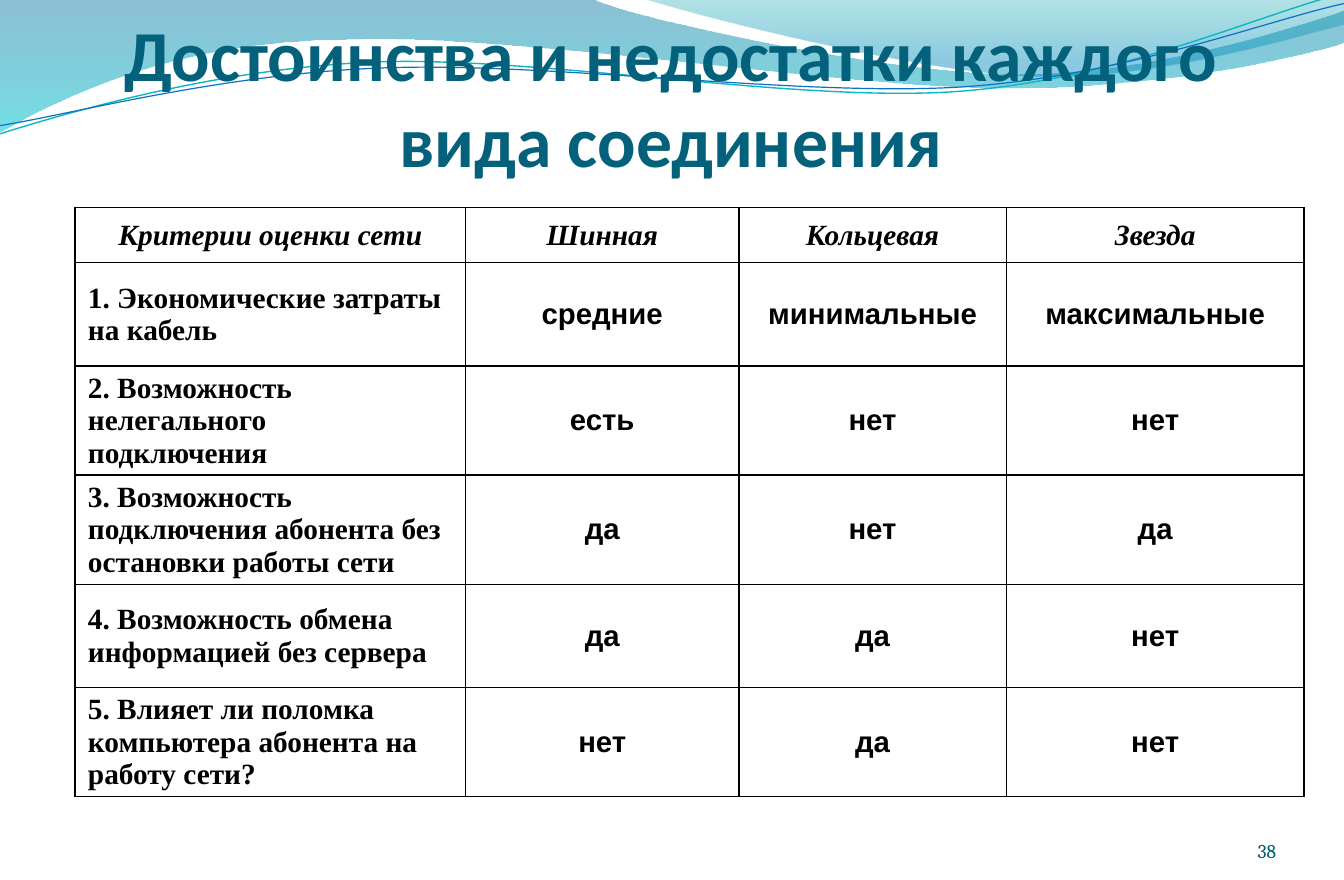
from math import cos, radians, sin

from lxml.etree import SubElement
from pptx import Presentation
from pptx.dml.color import RGBColor
from pptx.enum.text import MSO_ANCHOR, PP_ALIGN
from pptx.oxml import parse_xml
from pptx.oxml.ns import nsdecls, qn
from pptx.util import Inches, Pt

BLACK = RGBColor(0x00, 0x00, 0x00)
TITLE = RGBColor(0x04, 0x61, 0x7B)
NUMBER = RGBColor(0x04, 0x5D, 0x75)
BLUE = RGBColor(0x00, 0x74, 0xA1)
CYAN = RGBColor(0x00, 0xC6, 0xCF)
TEAL = RGBColor(0x00, 0xA1, 0xA9)
SKY = RGBColor(0x00, 0x8B, 0xBF)
AQUA = RGBColor(0x0A, 0xB8, 0xBF)
ROYAL = RGBColor(0x0F, 0x6F, 0xC6)
TILT = 2.7

LEFT_WAVE = [
    [(0, -0.01)], [(5.04, -0.01)],
    [(5.45, 0.17), (7.6, 0.63), (8.69, 0.63)],
    [(9.78, 0.63), (10.98, 0.26), (11.46, 0.09)],
    [(11.47, 0.36)],
    [(11.27, 0.44), (9.97, 0.76), (8.55, 0.75)],
    [(7.13, 0.75), (4.37, 0.28), (2.95, 0.34)],
    [(1.48, 0.35), (0.53, 0.83), (-0.01, 1.13)],
]
RIGHT_WAVE = [
    [(5.49, -0.01)],
    [(5.84, 0.11), (7.81, 0.62), (8.81, 0.65)],
    [(9.8, 0.69), (11.02, 0.32), (11.46, 0.21)],
    [(11.46, 0)],
]
AQUA_LINE = [
    [(0, 1.14)],
    [(0.55, 0.97), (1.81, 0.59), (3.17, 0.53)],
    [(4.53, 0.47), (6.79, 0.88), (8.16, 0.78)],
    [(9.54, 0.68), (10.75, 0.12), (11.43, -0.05)],
]
ROYAL_LINE = [
    [(0, 1.07)],
    [(0.54, 0.99), (1.88, 0.63), (3.24, 0.58)],
    [(4.61, 0.52), (6.84, 0.83), (8.21, 0.74)],
    [(9.58, 0.65), (10.78, 0.18), (11.46, 0.03)],
]

COLS = [3.33, 2.33, 2.28, 2.54]
ROWS = [0.47, 0.88, 0.93, 0.93, 0.88, 0.93]
CELLS = [
    ["Критерии оценки сети", "Шинная", "Кольцевая", "Звезда"],
    ["1. Экономические затраты на кабель", "средние", "минимальные", "максимальные"],
    ["2. Возможность нелегального подключения", "есть", "нет", "нет"],
    ["3. Возможность подключения абонента без остановки работы сети", "да", "нет", "да"],
    ["4. Возможность обмена информацией без сервера", "да", "да", "нет"],
    ["5. Влияет ли поломка компьютера абонента на работу сети?", "нет", "да", "нет"],
]


def turn(path, mid_x, mid_y):
    """Turn a path clockwise by the tilt about a middle point."""
    c, s = cos(radians(TILT)), sin(radians(TILT))
    return [[(mid_x + (x - mid_x) * c - (y - mid_y) * s,
              mid_y + (x - mid_x) * s + (y - mid_y) * c) for x, y in part]
            for part in path]


class Painter:
    """Hold the slide and its style, and draw each kind of element."""

    def __init__(self, slide):
        self.slide = slide
        self.edge = Pt(1)
        self.size = 18

    def outline(self, path, close):
        ends = [tuple(map(Inches, part[-1])) for part in path]
        build = self.slide.shapes.build_freeform(*ends[0])
        build.add_line_segments(ends[1:], close=close)
        shape = build.convert_to_shape()
        shape.shadow.inherit = False
        lines = list(shape._element.iter(qn("a:lnTo")))
        for line, part in zip(lines, path[1:]):
            if len(part) == 3:
                curve = SubElement(line.getparent(), qn("a:cubicBezTo"))
                for x, y in part:
                    point = SubElement(curve, qn("a:pt"))
                    point.set("x", str(Inches(x) - shape.left))
                    point.set("y", str(Inches(y) - shape.top))
                line.getparent().replace(line, curve)
        return shape

    def wave(self, path, stops):
        shape = self.outline(path, True)
        shape.line.fill.background()
        shape.fill.gradient()
        shape.fill.gradient_angle = 270
        for stop, (place, color, alpha) in zip(shape.fill.gradient_stops, stops):
            stop.position = place
            stop.color.rgb = color
        marks = shape.fill._xPr.iter(qn("a:srgbClr"))
        for mark, (place, color, alpha) in zip(list(marks), stops):
            SubElement(mark, qn("a:alpha")).set("val", str(alpha * 1000))

    def curve(self, path, middle, color, width):
        shape = self.outline(turn(path, *middle), False)
        shape.rotation = 360 - TILT
        shape.fill.background()
        shape.line.color.rgb = color
        shape.line.width = Pt(width)

    def style(self, frame, align, face, size, color, bold=False, slant=False):
        for line in frame.paragraphs:
            line.alignment = align
            for run in line.runs:
                font = run.font
                font.name, font.size = face, Pt(size)
                font.bold, font.italic = bold, slant
                font.color.rgb = color

    def text(self, words, box, top, *look, **more):
        frame = self.slide.shapes.add_textbox(*map(Inches, box)).text_frame
        frame.word_wrap = True
        frame.vertical_anchor = MSO_ANCHOR.BOTTOM
        frame.margin_left = frame.margin_right = frame.margin_bottom = 0
        frame.margin_top = Inches(top)
        frame.text = words
        self.style(frame, *look, **more)

    def border(self, cell):
        props = cell._tc.get_or_add_tcPr()
        for spot, side in enumerate("LRTB"):
            props.insert(spot, parse_xml(
                f'<a:ln{side} {nsdecls("a")} w="{self.edge}"><a:solidFill>'
                f'<a:srgbClr val="{BLACK}"/></a:solidFill></a:ln{side}>'))

    def table(self, left, top):
        frame = self.slide.shapes.add_table(
            len(ROWS), len(COLS), Inches(left), Inches(top),
            Inches(sum(COLS)), Inches(sum(ROWS)))
        table = frame.table
        table.first_row = table.horz_banding = False
        for col, width in zip(table.columns, COLS):
            col.width = Inches(width)
        for row, height in zip(table.rows, ROWS):
            row.height = Inches(height)
        for y, words in enumerate(CELLS):
            for x, word in enumerate(words):
                cell = table.cell(y, x)
                cell.text_frame.text = word
                cell.vertical_anchor = MSO_ANCHOR.MIDDLE
                cell.margin_left = cell.margin_right = Inches(0.11)
                cell.margin_top = cell.margin_bottom = Inches(0.01)
                cell.fill.background()
                self.border(cell)
                head = y == 0
                align = PP_ALIGN.CENTER if head or x else PP_ALIGN.LEFT
                face = "Arial" if x and not head else "Times New Roman"
                self.style(cell.text_frame, align, face, self.size, BLACK,
                           bold=True, slant=head)


def main():
    deck = Presentation()
    deck.slide_width, deck.slide_height = Inches(11.46), Inches(7.5)
    paint = Painter(deck.slides.add_slide(deck.slide_layouts[6]))
    paint.wave(LEFT_WAVE, [(0, BLUE, 45), (1, CYAN, 55)])
    paint.wave(RIGHT_WAVE, [(0, TEAL, 30), (0.8, SKY, 45)])
    paint.curve(AQUA_LINE, (5.72, 0.58), AQUA, 0.85)
    paint.curve(ROYAL_LINE, (5.73, 0.59), ROYAL, 0.75)
    paint.text("Достоинства и недостатки каждого вида соединения",
               (0.57, 0.3, 10.31, 1.25), 0.05,
               PP_ALIGN.CENTER, "Calibri", 44, TITLE, bold=True)
    paint.table(0.64, 1.77)
    paint.text("38", (8.21, 6.83, 2.67, 0.52), 0,
               PP_ALIGN.RIGHT, "Cambria", 12, NUMBER)
    deck.save("out.pptx")


if __name__ == "__main__":
    main()
